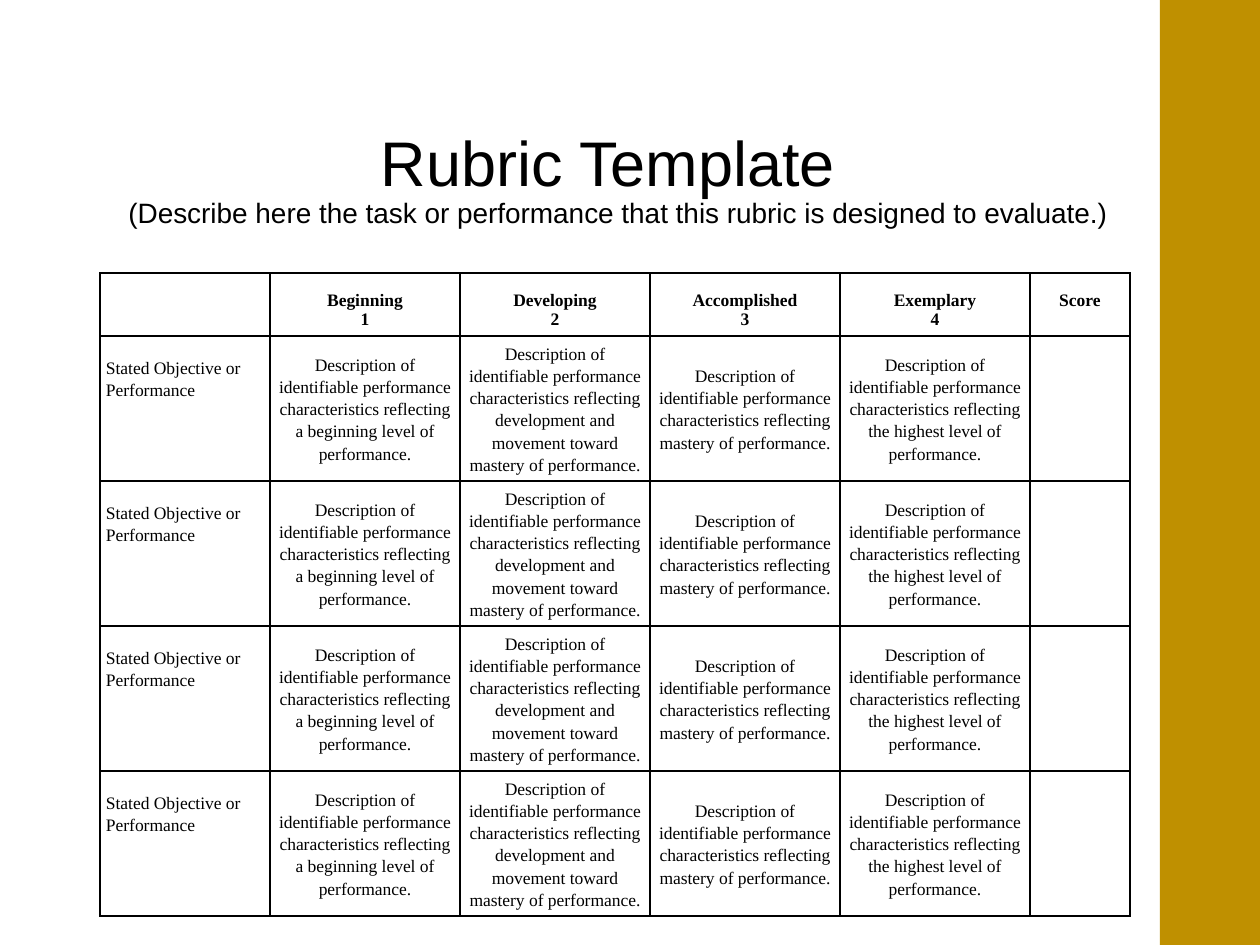
import pptx
import pptx.dml.color
import pptx.enum.shapes
import pptx.enum.text
import pptx.oxml
import pptx.oxml.ns
import pptx.util

PX = 914400 // 126
BLACK = pptx.dml.color.RGBColor(0x00, 0x00, 0x00)
WHITE = pptx.dml.color.RGBColor(0xFF, 0xFF, 0xFF)
GOLD = pptx.dml.color.RGBColor(0xBF, 0x90, 0x00)
LEFT, CENTER = pptx.enum.text.PP_ALIGN.LEFT, pptx.enum.text.PP_ALIGN.CENTER
TOP = pptx.enum.text.MSO_ANCHOR.TOP
MIDDLE = pptx.enum.text.MSO_ANCHOR.MIDDLE
BOTTOM = pptx.enum.text.MSO_ANCHOR.BOTTOM

TITLE = "Rubric Template"
TASK = "(Describe here the task or performance that this rubric is designed to evaluate.)"
HEADINGS = ["", "Beginning\n1", "Developing\n2", "Accomplished\n3", "Exemplary\n4", "Score"]
OBJECTIVE = "Stated Objective or Performance"
LEVELS = [
    "a beginning level of performance.",
    "development and movement toward mastery of performance.",
    "mastery of performance.",
    "the highest level of performance.",
]
DESCRIPTIONS = [
    f"Description of identifiable performance characteristics reflecting {level}" for level in LEVELS
]
OBJECTIVE_COUNT = 4
RUBRIC = [HEADINGS] + [[OBJECTIVE, *DESCRIPTIONS, ""]] * OBJECTIVE_COUNT

COLUMN_WIDTHS = [170] + [190] * len(LEVELS) + [100]
ROW_HEIGHTS = [63] + [145] * OBJECTIVE_COUNT
RUBRIC_LEFT, RUBRIC_TOP = 100, 273

TITLE_FONT = {"name": "Arial", "size": pptx.util.Pt(36)}
TASK_FONT = {"name": "Arial", "size": pptx.util.Pt(16)}
CELL_FONT = {"name": "Times New Roman", "size": pptx.util.Pt(10)}
HEADING_STYLE = {"font": {**CELL_FONT, "bold": True}, "align": CENTER, "spacing": 1.0,
                 "anchor": TOP, "top": 18}
OBJECTIVE_STYLE = {"font": CELL_FONT, "align": LEFT, "spacing": 1.15, "anchor": TOP, "top": 20}
LEVEL_STYLE = {"font": CELL_FONT, "align": CENTER, "spacing": 1.15, "anchor": MIDDLE, "top": 0}


def set_values(target, values):
    for key, value in values.items():
        setattr(target, key, value)


def write_text(frame, text, font, align, spacing=1.0):
    frame.text = text
    for paragraph in frame.paragraphs:
        set_values(paragraph, {"alignment": align, "line_spacing": spacing})
        for run in paragraph.runs:
            set_values(run.font, font)
            run.font.color.rgb = BLACK


def add_label(slide, box, text, font, align, frame_values):
    frame = slide.shapes.add_textbox(*(length * PX for length in box)).text_frame
    set_values(frame, {"word_wrap": True, **frame_values})
    write_text(frame, text, font, align)


def add_borders(cell):
    properties = cell._tc.get_or_add_tcPr()
    for side in ("lnL", "lnR", "lnT", "lnB"):
        properties.append(pptx.oxml.parse_xml(
            f'<a:{side} {pptx.oxml.ns.nsdecls("a")} w="12700"><a:solidFill>'
            f'<a:srgbClr val="{BLACK}"/></a:solidFill></a:{side}>'
        ))


def cell_style(row, column):
    if row == 0:
        return HEADING_STYLE
    return OBJECTIVE_STYLE if column == 0 else LEVEL_STYLE


def fill_cell(cell, text, style):
    set_values(cell, {
        "margin_left": 6 * PX, "margin_right": 6 * PX,
        "margin_top": style["top"] * PX, "margin_bottom": 0,
        "vertical_anchor": style["anchor"],
    })
    add_borders(cell)
    cell.fill.background()
    if text:
        write_text(cell.text_frame, text, style["font"], style["align"], style["spacing"])


def add_rubric(slide):
    rubric = slide.shapes.add_table(
        len(RUBRIC), len(HEADINGS), RUBRIC_LEFT * PX, RUBRIC_TOP * PX,
        sum(COLUMN_WIDTHS) * PX, sum(ROW_HEIGHTS) * PX,
    ).table
    set_values(rubric, {"first_row": False, "horz_banding": False})
    for column, width in zip(rubric.columns, COLUMN_WIDTHS):
        column.width = width * PX
    for row, height in zip(rubric.rows, ROW_HEIGHTS):
        row.height = height * PX
    for r, texts in enumerate(RUBRIC):
        for c, text in enumerate(texts):
            fill_cell(rubric.cell(r, c), text, cell_style(r, c))


def main():
    deck = pptx.Presentation()
    set_values(deck, {"slide_width": 1260 * PX, "slide_height": 945 * PX})
    slide = deck.slides.add_slide(deck.slide_layouts[6])
    slide.background.fill.solid()
    slide.background.fill.fore_color.rgb = WHITE

    side_band = slide.shapes.add_shape(
        pptx.enum.shapes.MSO_SHAPE.RECTANGLE, 1160 * PX, 0, 100 * PX, 945 * PX
    )
    side_band.shadow.inherit = False
    side_band.fill.solid()
    side_band.fill.fore_color.rgb = GOLD
    side_band.line.fill.background()

    add_label(slide, (104, 63, 1008, 136), TITLE, TITLE_FONT, CENTER, {
        "vertical_anchor": BOTTOM, "margin_left": 0, "margin_right": 0, "margin_bottom": 0,
    })
    add_label(slide, (116, 189, 1061, 47), TASK, TASK_FONT, LEFT, {
        "auto_size": pptx.enum.text.MSO_AUTO_SIZE.SHAPE_TO_FIT_TEXT,
    })
    add_rubric(slide)
    deck.save("out.pptx")


if __name__ == "__main__":
    main()
